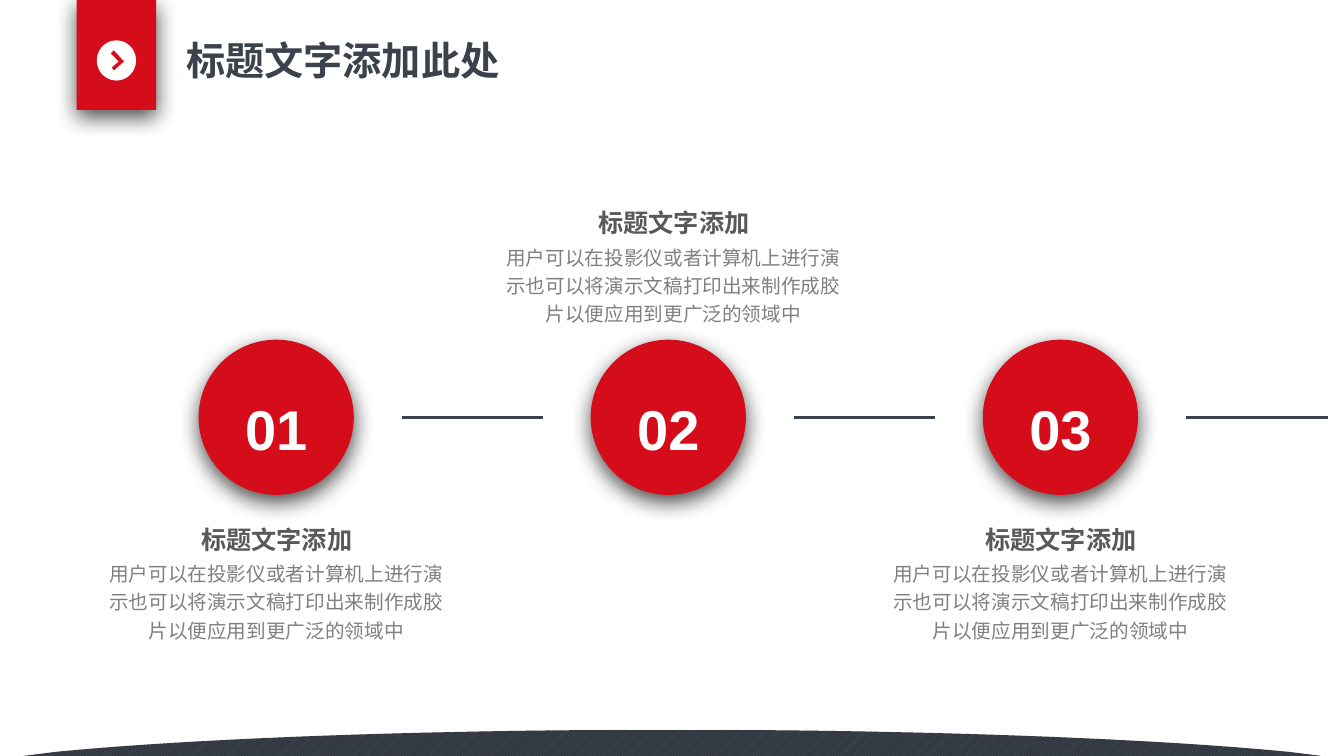
from lxml import etree
from pptx import Presentation
from pptx import util as u
from pptx.dml import color
from pptx.enum import dml, shapes, text
from pptx.oxml import ns

PX = 9144  # one px is a hundredth of an inch
COLORS = {
    "red": "D50D1B", "slate": "3B424B", "hatch": "181818", "white": "FFFFFF",
    "heading": "595959", "body": "808080", "shadow": "000000",
}
BODY = "用户可以在投影仪或者计算机上进行演示也可以将演示文稿打印出来制作成胶片以便应用到更广泛的领域中"


def rgb(name):
    return color.RGBColor.from_string(COLORS[name])


def px(*lengths):
    return [u.Emu(round(length * PX)) for length in lengths]


def bezier(start, control1, control2, end, steps=24):
    """Points along a cubic curve, without its start."""
    points = []
    for step in range(1, steps + 1):
        t = step / steps
        weights = ((1 - t) ** 3, 3 * t * (1 - t) ** 2, 3 * t * t * (1 - t), t ** 3)
        corners = (start, control1, control2, end)
        points.append(tuple(sum(w * c[axis] for w, c in zip(weights, corners))
                            for axis in (0, 1)))
    return points


class SlideBuilder:
    def __init__(self, slide):
        self.slide = slide

    def paint(self, shape, fill):
        shape.shadow.inherit = False
        shape.line.fill.background()
        shape.fill.solid()
        shape.fill.fore_color.rgb = rgb(fill)
        return shape

    def shape(self, kind, box, fill, shadow=False):
        shape = self.paint(self.slide.shapes.add_shape(kind, *px(*box)), fill)
        if shadow:
            effects = shape._element.spPr.find(ns.qn("a:effectLst"))
            outer = etree.SubElement(
                effects, ns.qn("a:outerShdw"), blurRad=str(u.Pt(16)),
                dist=str(u.Pt(5)), dir="5400000", algn="t", rotWithShape="0")
            tint = etree.SubElement(outer, ns.qn("a:srgbClr"), val=COLORS["shadow"])
            etree.SubElement(tint, ns.qn("a:alpha"), val="71000")
        return shape

    def polygon(self, points, fill):
        start, *rest = [px(*point) for point in points]
        builder = self.slide.shapes.build_freeform(*start, scale=1.0)
        builder.add_line_segments(rest, close=True)
        return self.paint(builder.convert_to_shape(), fill)

    def line(self, left, right, y):
        line = self.slide.shapes.add_connector(
            shapes.MSO_CONNECTOR.STRAIGHT, *px(left, y, right, y))
        line.line.color.rgb = rgb("slate")
        line.line.width = u.Pt(2.25)
        etree.SubElement(line._element.spPr, ns.qn("a:effectLst"))

    def text(self, box, words, size, fill, bold=True, font="Arial",
             align=text.PP_ALIGN.CENTER, spacing=1.2):
        frame = self.slide.shapes.add_textbox(*px(*box)).text_frame
        frame.word_wrap = True
        frame.auto_size = text.MSO_AUTO_SIZE.SHAPE_TO_FIT_TEXT
        paragraph = frame.paragraphs[0]
        paragraph.text = words
        paragraph.alignment = align
        paragraph.line_spacing = spacing
        paragraph.font.name = font
        paragraph.font.size = u.Pt(size)
        paragraph.font.bold = bold
        paragraph.font.color.rgb = rgb(fill)


def main():
    presentation = Presentation()
    presentation.slide_width, presentation.slide_height = u.Inches(13.333), u.Inches(7.5)
    slide = presentation.slides.add_slide(presentation.slide_layouts[6])
    builder = SlideBuilder(slide)
    rectangle, oval = shapes.MSO_SHAPE.RECTANGLE, shapes.MSO_SHAPE.OVAL

    # Hatched hill at the foot, mirrored about its top
    half = [(23, 750), (55, 746)]
    half += bezier((55, 746), (188, 733), (412, 724), (667, 724))
    mirrored = [(2 * 667 - x, y) for x, y in reversed(half[:-1])]
    hill = builder.polygon(half + mirrored, "slate")
    hill.fill.patterned()
    hill.fill.pattern = dml.MSO_PATTERN.LIGHT_UPWARD_DIAGONAL
    hill.fill.fore_color.rgb = rgb("hatch")
    hill.fill.back_color.rgb = rgb("slate")

    # Title with its ribbon and chevron badge
    builder.shape(rectangle, (76, 0, 79, 109), "red", shadow=True)
    builder.text((175, 31, 403, 57), "标题文字添加此处", 28, "slate", font="Lato",
                 align=text.PP_ALIGN.LEFT, spacing=1.0)
    builder.shape(oval, (96, 40, 39, 40), "white")
    builder.polygon([(113, 50), (110, 53), (118, 61), (111, 67), (113, 70), (123, 61)],
                    "red")

    # Three steps: circle, number, line to the next, and caption
    captions = [(274, 509), (668, 195), (1052, 509)]  # centre, top
    for index, (center, top) in enumerate(captions):
        left = 197 + 389 * index
        builder.shape(oval, (left, 337, 154, 154), "red", shadow=True)
        builder.line(left + 202, left + 342, 414)
        builder.text((left, 373, 154, 83), f"{index + 1:02}", 40, "white")
        builder.text((center - 184, top + 39, 368, 95), BODY, 14, "body", bold=False)
        builder.text((center - 122, top, 245, 43), "标题文字添加", 18, "heading")

    presentation.save("out.pptx")


if __name__ == "__main__":
    main()
